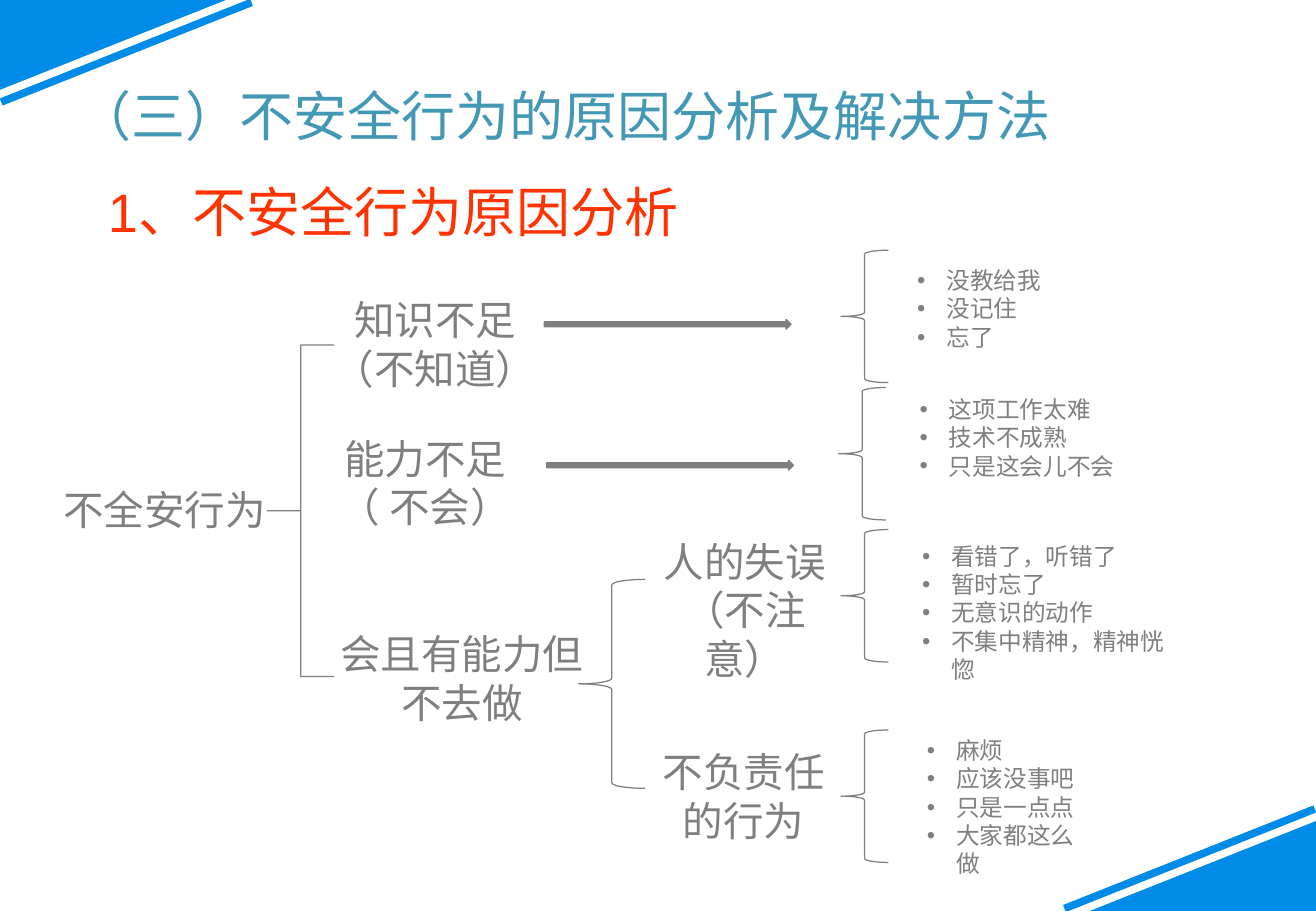
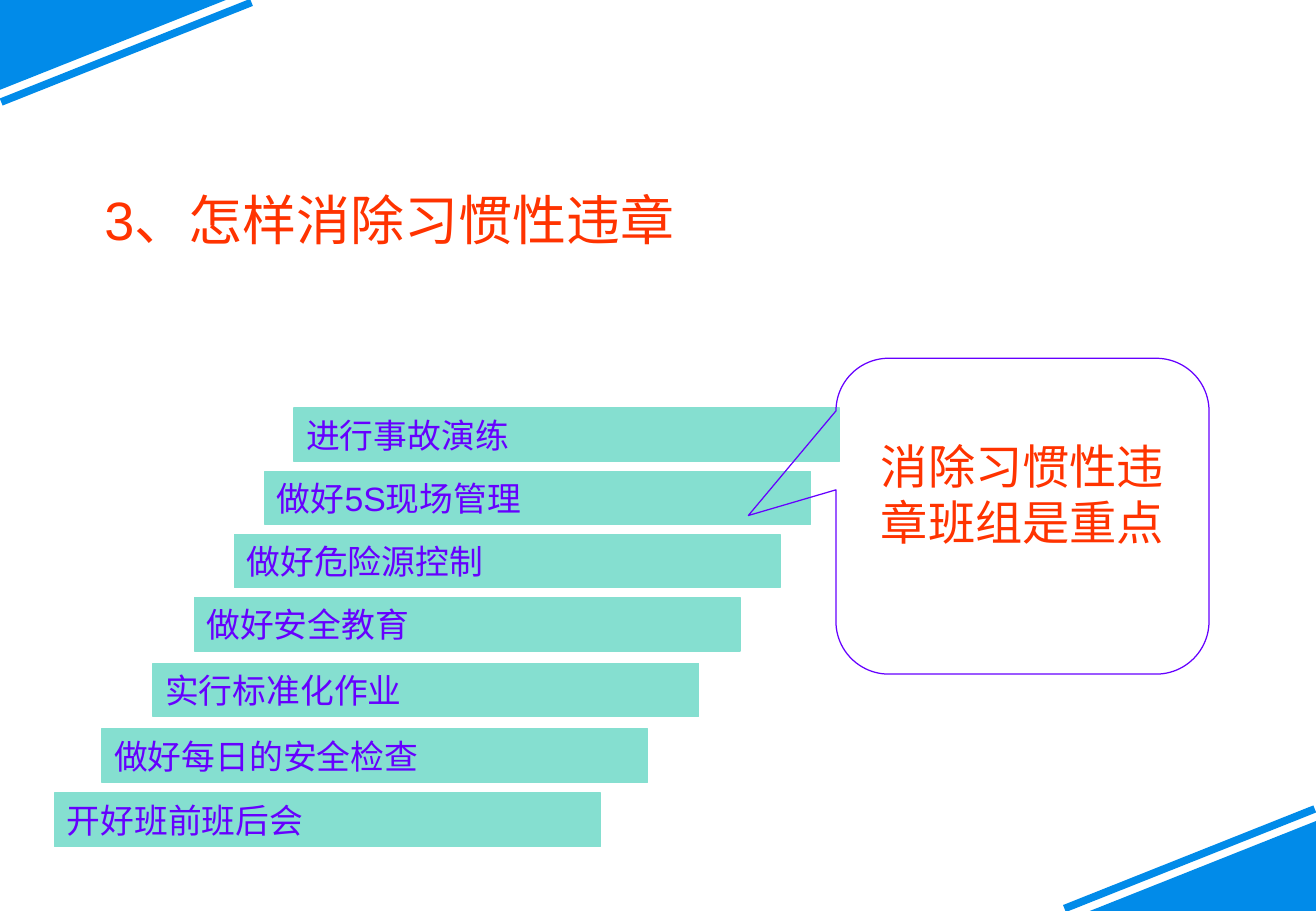
"""Build two slides on unsafe behaviour: a cause tree and a staircase of measures."""
from lxml.etree import SubElement
from pptx import Presentation
from pptx.dml.color import RGBColor
from pptx.enum.shapes import MSO_CONNECTOR as Connector, MSO_SHAPE as Shape
from pptx.enum.text import MSO_ANCHOR as Anchor, PP_ALIGN as Align
from pptx.oxml.ns import qn
from pptx.util import Inches, Pt

FONT = "Arial"
BLUE, TEAL, RED = "018BE9", "4298B5", "FF3300"
GREY, MINT, VIOLET = "7F7F7F", "85DFD0", "6600FF"
WIDTH, HEIGHT = 10.83, 7.5

LABELS = [
    (2.37, 2.38, 2.42, ["知识不足", "（不知道）"]),
    (2.29, 3.52, 2.42, ["能力不足", "（ 不会）"]),
    (2.59, 5.13, 2.42, ["会且有能力但不去做"]),
    (5.35, 4.37, 1.56, ["人的失误", "（不注意）"]),
    (5.34, 6.1, 1.56, ["不负责任的行为"]),
]
BRACES = [
    (2.2, 2.84, 0.55, 2.73, 0),
    (4.76, 4.77, 0.55, 1.72, 0.083),
    (6.92, 2.06, 0.39, 1.09, 0.083),
    (6.9, 3.19, 0.39, 1.09, 0.083),
    (6.92, 4.36, 0.39, 1.09, 0.083),
    (6.92, 6.01, 0.39, 1.09, 0.083),
]
ARROWS = [(4.48, 2.63), (4.5, 3.79)]
REASONS = [
    (7.45, 2.14, 1.48, 0.81, ["没教给我", "没记住", "忘了"]),
    (7.47, 3.2, 1.85, 0.81, ["这项工作太难", "技术不成熟", "只是这会儿不会"]),
    (7.49, 4.41, 2.3, 1.28,
     ["看错了，听错了", "暂时忘了", "无意识的动作", "不集中精神，精神恍惚"]),
    (7.53, 6.01, 1.48, 1.04, ["麻烦", "应该没事吧", "只是一点点", "大家都这么做"]),
]
STEPS = [
    (2.42, 3.36, "进行事故演练"),
    (2.18, 3.88, "做好5S现场管理"),
    (1.93, 4.4, "做好危险源控制"),
    (1.6, 4.92, "做好安全教育"),
    (1.26, 5.46, "实行标准化作业"),
    (0.84, 6, "做好每日的安全检查"),
    (0.45, 6.53, "开好班前班后会"),
]


def color(value):
    """Turn a hex string into a colour."""
    return RGBColor.from_string(value)


def box(left, top, width, height):
    """Convert a frame given in inches to lengths."""
    return [Inches(value) for value in (left, top, width, height)]


def set_bullet(paragraph):
    """Give a paragraph a round bullet with a hanging indent."""
    properties = paragraph._p.get_or_add_pPr()
    properties.set("marL", str(Inches(0.24)))
    properties.set("indent", str(-Inches(0.24)))
    SubElement(properties, qn("a:buFont")).set("typeface", FONT)
    SubElement(properties, qn("a:buChar")).set("char", "•")


def write(shape, lines, size, ink, align=Align.LEFT, anchor=Anchor.TOP, bullets=False):
    """Fill a shape with one formatted paragraph per line."""
    frame = shape.text_frame
    frame.word_wrap = True
    frame.vertical_anchor = anchor
    frame.text = "\n".join(lines)
    for paragraph in frame.paragraphs:
        paragraph.alignment = align
        if bullets:
            set_bullet(paragraph)
        for run in paragraph.runs:
            run.font.name = FONT
            run.font.size = Pt(size)
            run.font.color.rgb = color(ink)


def add_text(slide, frame, lines, size, ink, **options):
    """Add a text box."""
    write(slide.shapes.add_textbox(*box(*frame)), lines, size, ink, **options)


def add_outlined(slide, kind, frame, line, fill=None, adjustments=()):
    """Add a preset shape with a thin line and an optional fill."""
    shape = slide.shapes.add_shape(kind, *box(*frame))
    shape.shadow.inherit = False
    shape.line.color.rgb = color(line)
    shape.line.width = Pt(0.75)
    if fill:
        shape.fill.solid()
        shape.fill.fore_color.rgb = color(fill)
    else:
        shape.fill.background()
    for index, value in enumerate(adjustments):
        shape.adjustments[index] = value
    return shape


def add_corner(slide, triangle, stripe):
    """Draw a blue corner triangle and the stripe beside it."""
    points = [(Inches(x), Inches(y)) for x, y in triangle]
    builder = slide.shapes.build_freeform(*points[0])
    builder.add_line_segments(points[1:], close=True)
    corner = builder.convert_to_shape()
    corner.shadow.inherit = False
    corner.fill.solid()
    corner.fill.fore_color.rgb = color(BLUE)
    corner.line.fill.background()
    ends = [Inches(value) for point in stripe for value in point]
    line = slide.shapes.add_connector(Connector.STRAIGHT, *ends)
    line.line.color.rgb = color(BLUE)
    line.line.width = Pt(4.5)
    SubElement(line._element.spPr, qn("a:effectLst"))


def add_slide(presentation):
    """Add a blank slide with its two opposite blue corners."""
    slide = presentation.slides.add_slide(presentation.slide_layouts[6])
    triangle = [(0, 0), (1.86, 0), (0, 0.74)]
    stripe = [(0.01, 0.84), (2.07, 0.02)]
    add_corner(slide, triangle, stripe)
    add_corner(slide, *[[(WIDTH - x, HEIGHT - y) for x, y in points]
                        for points in (triangle, stripe)])
    return slide


def add_heading(slide, left, top, text, ink=RED):
    """Add a large one-line heading."""
    add_text(slide, (left, top, 9.25, 0.64), [text], 32, ink)


def build_causes(presentation):
    """Build the tree of causes of unsafe behaviour."""
    slide = add_slide(presentation)
    add_heading(slide, 0.54, 0.63, "（三）不安全行为的原因分析及解决方法", TEAL)
    add_heading(slide, 0.79, 1.42, "1、不安全行为原因分析")
    add_text(slide, (0.42, 3.94, 1.88, 0.5), ["不全安行为"], 24, GREY)
    for left, top, width, lines in LABELS:
        add_text(slide, (left, top, width, 0.91), lines, 24, GREY, align=Align.CENTER)
    for *frame, curve in BRACES:
        add_outlined(slide, Shape.LEFT_BRACE, frame, GREY, adjustments=(curve, 0.5))
    for left, top in ARROWS:
        add_outlined(slide, Shape.RIGHT_ARROW, (left, top, 2.03, 0.08), GREY, GREY)
    for *frame, lines in REASONS:
        add_text(slide, frame, lines, 14, GREY, bullets=True)


def build_measures(presentation):
    """Build the staircase of measures with its callout."""
    slide = add_slide(presentation)
    add_heading(slide, 0.76, 1.49, "3、怎样消除习惯性违章")
    for left, top, text in STEPS:
        step = add_outlined(slide, Shape.RECTANGLE, (left, top, 4.49, 0.44), MINT, MINT)
        write(step, [text], 20, VIOLET, anchor=Anchor.MIDDLE)
    callout = add_outlined(slide, Shape.ROUNDED_RECTANGULAR_CALLOUT,
                           (6.88, 2.95, 3.07, 2.6), VIOLET,
                           adjustments=(-0.735, -0.002, 0.167))
    write(callout, ["消除习惯性违章班组是重点"], 28, RED, align=Align.CENTER)
    callout.text_frame.margin_top = Inches(0.52)


def main():
    """Build and save the presentation."""
    presentation = Presentation()
    presentation.slide_width = Inches(WIDTH)
    presentation.slide_height = Inches(HEIGHT)
    build_causes(presentation)
    build_measures(presentation)
    presentation.save("out.pptx")


if __name__ == "__main__":
    main()
